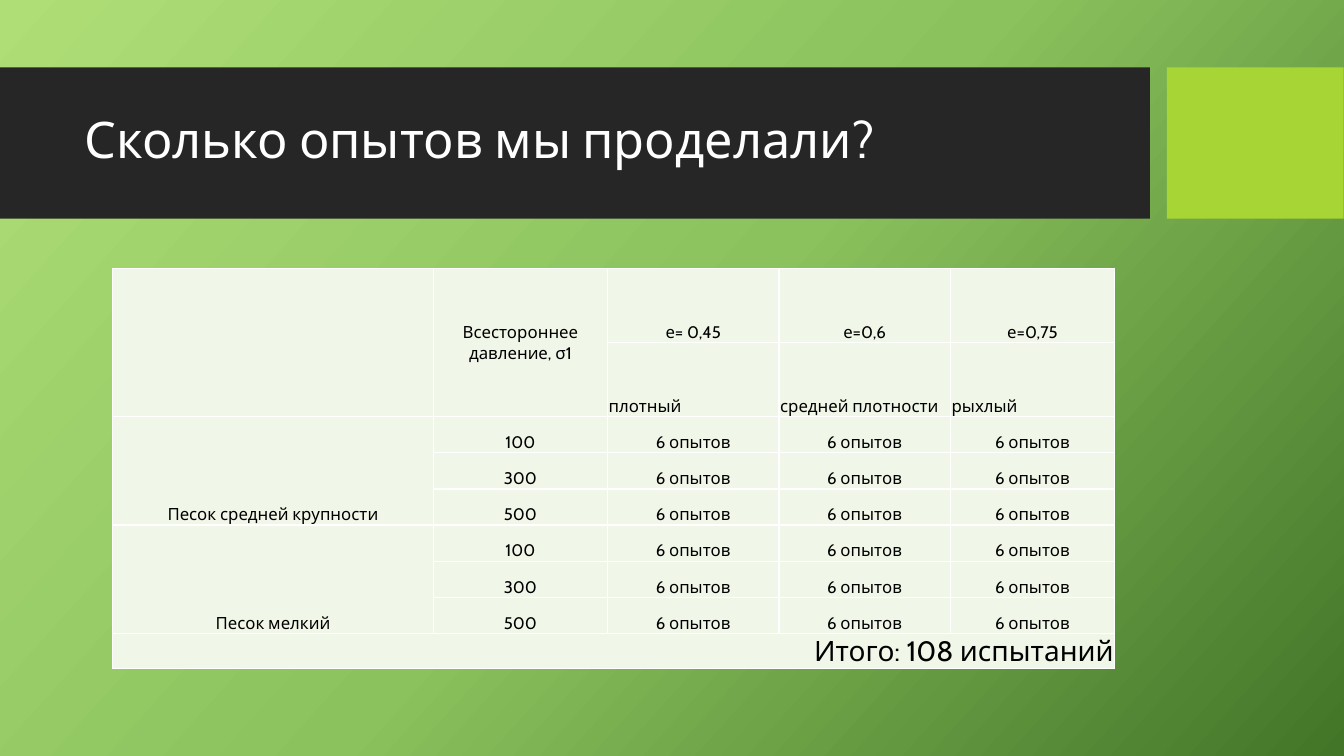
from copy import deepcopy
from dataclasses import dataclass

from lxml import etree
from pptx import Presentation
from pptx import util as u
from pptx.dml.color import RGBColor
from pptx.enum import shapes, text
from pptx.oxml import ns

WHITE = RGBColor(0xFF, 0xFF, 0xFF)
BLACK = RGBColor(0x00, 0x00, 0x00)
CHARCOAL = RGBColor(0x26, 0x26, 0x26)
LIME = RGBColor(0xA7, 0xD5, 0x35)
PALE_GREEN = RGBColor(0xF1, 0xF7, 0xE8)
BACKGROUND_STOPS = [
    (0, RGBColor(0xAF, 0xDE, 0x77)),
    (0.5, RGBColor(0x8B, 0xC2, 0x5D)),
    (1, RGBColor(0x43, 0x75, 0x28)),
]

FONT = "Cabin"
CENTER, LEFT, RIGHT = text.PP_ALIGN.CENTER, text.PP_ALIGN.LEFT, text.PP_ALIGN.RIGHT
MIDDLE, BOTTOM = text.MSO_ANCHOR.MIDDLE, text.MSO_ANCHOR.BOTTOM

COLUMN_WIDTHS = [8.08, 4.39, 4.32, 4.32, 4.14]
ROW_HEIGHTS = [1.87] * 2 + [0.91] * 6 + [0.88]
SANDS = ["Песок средней крупности", "Песок мелкий"]
PRESSURES = ["100", "300", "500"]
DENSITIES = [("е= 0,45", "плотный"), ("е=0,6", "средней плотности"), ("е=0,75", "рыхлый")]


@dataclass
class Band:
    left: float
    width: float
    color: RGBColor


@dataclass
class Entry:
    row: int
    column: int
    wording: str
    rows: int = 1
    columns: int = 1
    size: int = 12
    align: text.PP_ALIGN = CENTER
    anchor: text.MSO_ANCHOR = MIDDLE


BANDS = [Band(0, 28.98, CHARCOAL), Band(29.41, 4.45, LIME)]


def set_values(target, values: dict) -> None:
    for name, value in values.items():
        setattr(target, name, value)


def write(paragraph, wording: str, size: int, color: RGBColor) -> None:
    run = paragraph.add_run()
    run.text = wording
    set_values(run.font, {"name": FONT, "size": u.Pt(size)})
    run.font.color.rgb = color


def paint_background(slide) -> None:
    fill = slide.background.fill
    fill.gradient()
    fill.gradient_angle = 318
    stop_list = slide.element.find(".//" + ns.qn("a:gsLst"))
    stop_list.append(deepcopy(stop_list[-1]))
    for stop, (position, color) in zip(fill.gradient_stops, BACKGROUND_STOPS):
        stop.position = position
        stop.color.rgb = color


def draw_band(slide, band: Band) -> None:
    shape = slide.shapes.add_shape(
        shapes.MSO_SHAPE.RECTANGLE, u.Cm(band.left), u.Cm(1.7), u.Cm(band.width), u.Cm(3.81))
    shape.shadow.inherit = False
    shape.fill.solid()
    shape.fill.fore_color.rgb = band.color
    shape.line.fill.background()


def draw_title(slide) -> None:
    title = slide.shapes.add_textbox(u.Cm(1.88), u.Cm(2.08), u.Cm(26.7), u.Cm(3))
    set_values(title.text_frame, {"word_wrap": True, "vertical_anchor": MIDDLE})
    paragraph = title.text_frame.paragraphs[0]
    paragraph.line_spacing = 0.9
    write(paragraph, "Сколько опытов мы проделали?", 36, WHITE)


def format_cell(cell) -> None:
    set_values(cell, {"margin_left": u.Cm(0.03), "margin_right": u.Cm(0.03),
                      "margin_top": u.Cm(0.03), "margin_bottom": 0})
    properties = cell._tc.get_or_add_tcPr()
    for side in ("lnL", "lnR", "lnT", "lnB"):
        line = etree.SubElement(properties, ns.qn(f"a:{side}"), w=str(u.Pt(1)))
        fill = etree.SubElement(line, ns.qn("a:solidFill"))
        etree.SubElement(fill, ns.qn("a:srgbClr"), val=str(WHITE))
    cell.fill.solid()
    cell.fill.fore_color.rgb = PALE_GREEN


def table_entries() -> list[Entry]:
    entries = [Entry(0, 0, "", rows=2),
               Entry(0, 1, "Всестороннее давление, σ1", rows=2)]
    for column, (ratio, density) in enumerate(DENSITIES, start=2):
        entries.append(Entry(0, column, ratio, anchor=BOTTOM))
        entries.append(Entry(1, column, density, align=LEFT, anchor=BOTTOM))
    for index, sand in enumerate(SANDS):
        first_row = 2 + index * len(PRESSURES)
        entries.append(Entry(first_row, 0, sand, rows=len(PRESSURES), anchor=BOTTOM))
        for row, pressure in enumerate(PRESSURES, start=first_row):
            for column, wording in enumerate([pressure] + ["6 опытов"] * len(DENSITIES), start=1):
                entries.append(Entry(row, column, wording, anchor=BOTTOM))
    entries.append(Entry(8, 0, "Итого: 108 испытаний", columns=5, size=20,
                         align=RIGHT, anchor=BOTTOM))
    return entries


def fill_entry(table, entry: Entry) -> None:
    cell = table.cell(entry.row, entry.column)
    if entry.rows * entry.columns > 1:
        cell.merge(table.cell(entry.row + entry.rows - 1, entry.column + entry.columns - 1))
    cell.vertical_anchor = entry.anchor
    if entry.wording:
        paragraph = cell.text_frame.paragraphs[0]
        paragraph.alignment = entry.align
        write(paragraph, entry.wording, entry.size, BLACK)


def draw_table(slide) -> None:
    table = slide.shapes.add_table(
        len(ROW_HEIGHTS), len(COLUMN_WIDTHS), u.Cm(2.84), u.Cm(6.76),
        u.Cm(sum(COLUMN_WIDTHS)), u.Cm(sum(ROW_HEIGHTS))).table
    set_values(table, {"first_row": False, "horz_banding": False})
    for column, width in zip(table.columns, COLUMN_WIDTHS):
        column.width = u.Cm(width)
    for row, height in zip(table.rows, ROW_HEIGHTS):
        row.height = u.Cm(height)
    for cell in table.iter_cells():
        format_cell(cell)
    for entry in table_entries():
        fill_entry(table, entry)


def main() -> None:
    presentation = Presentation()
    set_values(presentation, {"slide_width": u.Cm(33.87), "slide_height": u.Cm(19.05)})
    slide = presentation.slides.add_slide(presentation.slide_layouts[6])

    # Background and header bands
    paint_background(slide)
    for band in BANDS:
        draw_band(slide, band)

    # Title and table of tests
    draw_title(slide)
    draw_table(slide)
    presentation.save("out.pptx")


if __name__ == "__main__":
    main()
